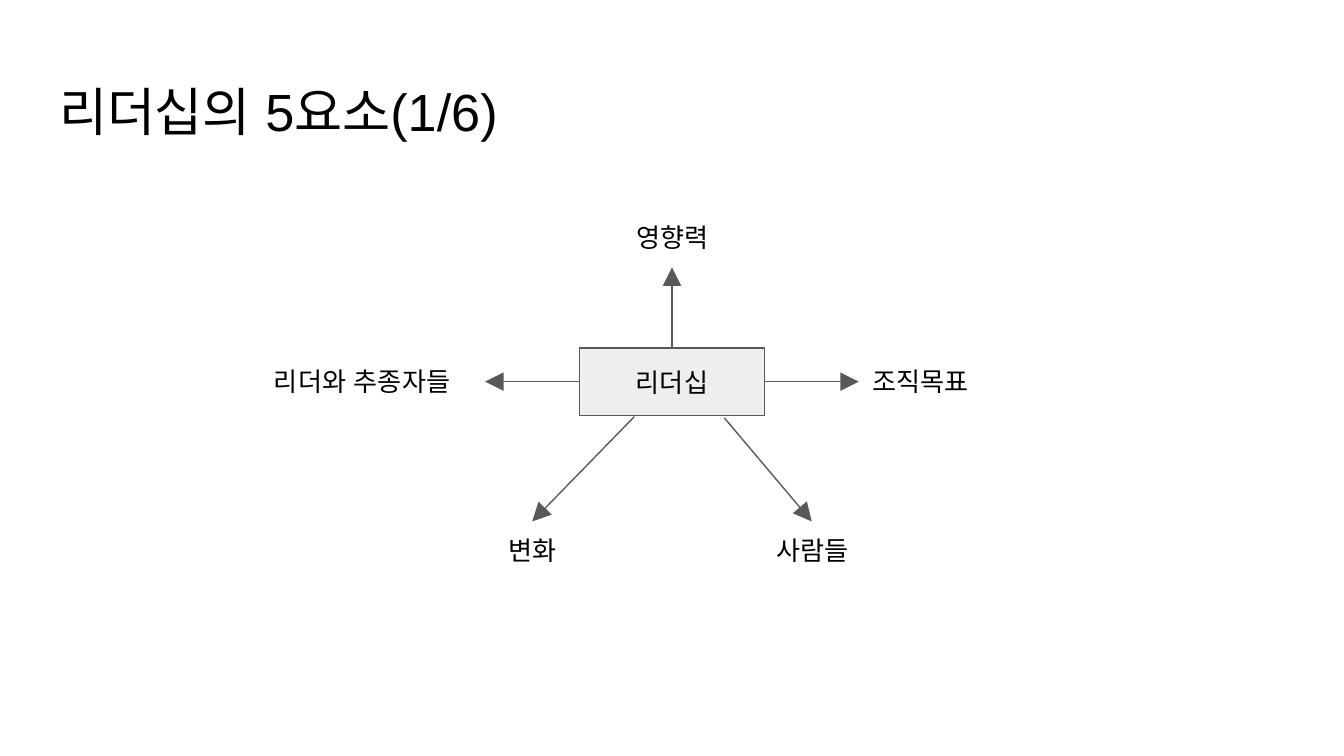
"""Build a slide showing leadership and its five elements as a spoke diagram."""
from lxml import etree
from pptx import Presentation
from pptx.dml.color import RGBColor
from pptx.enum.shapes import MSO_CONNECTOR as CONNECTOR, MSO_SHAPE as SHAPE
from pptx.enum.text import MSO_ANCHOR as ANCHOR, MSO_AUTO_SIZE as AUTO_SIZE, PP_ALIGN as ALIGN
from pptx.oxml.ns import qn
from pptx.util import Inches, Pt

COLORS = {"text": "000000", "box": "EEEEEE", "line": "595959"}
FONT = "Arial"
LABEL_WIDTH, LABEL_HEIGHT = 1.67, 0.44


def color(name):
    return RGBColor.from_string(COLORS[name])


def write(shape, text, size, align, anchor=ANCHOR.TOP):
    frame = shape.text_frame
    frame.text = text
    frame_format = {"word_wrap": True, "auto_size": AUTO_SIZE.NONE, "vertical_anchor": anchor}
    for side in ("left", "top", "right", "bottom"):
        frame_format[f"margin_{side}"] = Inches(0.1)
    for name, value in frame_format.items():
        setattr(frame, name, value)
    paragraph = frame.paragraphs[0]
    paragraph.alignment = align
    run = paragraph.runs[0]
    for name, value in {"name": FONT, "size": Pt(size)}.items():
        setattr(run.font, name, value)
    run.font.color.rgb = color("text")
    for script in ("a:ea", "a:cs"):
        etree.SubElement(run._r.get_or_add_rPr(), qn(script), typeface=FONT)


prs = Presentation()
prs.slide_width, prs.slide_height = Inches(10), Inches(10) * 9 // 16
slide = prs.slides.add_slide(prs.slide_layouts[5])
shapes = slide.shapes

title = shapes.title
title_place = {"left": 0.34, "top": 0.49, "width": 9.32, "height": 0.63}
for name, value in title_place.items():
    setattr(title, name, Inches(value))
write(title, "리더십의 5요소(1/6)", 28, ALIGN.LEFT)

leadership = shapes.add_shape(SHAPE.RECTANGLE, Inches(4.31), Inches(2.59), Inches(1.38), Inches(0.5))
leadership.shadow.inherit = False
leadership.fill.solid()
leadership.fill.fore_color.rgb = color("box")
leadership.line.color.rgb = color("line")
leadership.line.width = Pt(0.75)
write(leadership, "리더십", 14, ALIGN.CENTER, ANCHOR.MIDDLE)

elements = [
    ("리더와 추종자들", (1.94, 2.62), ALIGN.LEFT, (4.31, 2.84), (3.61, 2.84)),
    ("영향력", (4.17, 1.55), ALIGN.CENTER, (5, 2.59), (5, 1.99)),
    ("조직목표", (6.39, 2.62), ALIGN.LEFT, (5.69, 2.84), (6.39, 2.84)),
    ("사람들", (5.21, 3.88), ALIGN.CENTER, (5.39, 3.11), (6.04, 3.88)),
    ("변화", (3.13, 3.88), ALIGN.CENTER, (4.72, 3.1), (3.96, 3.88)),
]
for element, (left, top), align, start, end in elements:
    label = shapes.add_textbox(Inches(left), Inches(top), Inches(LABEL_WIDTH), Inches(LABEL_HEIGHT))
    write(label, element, 14, align)

    arrow = shapes.add_connector(CONNECTOR.STRAIGHT, *(Inches(value) for value in start + end))
    arrow.line.color.rgb = color("line")
    arrow.line.width = Pt(0.75)
    etree.SubElement(arrow.line._get_or_add_ln(), qn("a:tailEnd"), type="triangle", w="lg", len="lg")
    etree.SubElement(arrow._element.spPr, qn("a:effectLst"))

prs.save("out.pptx")
